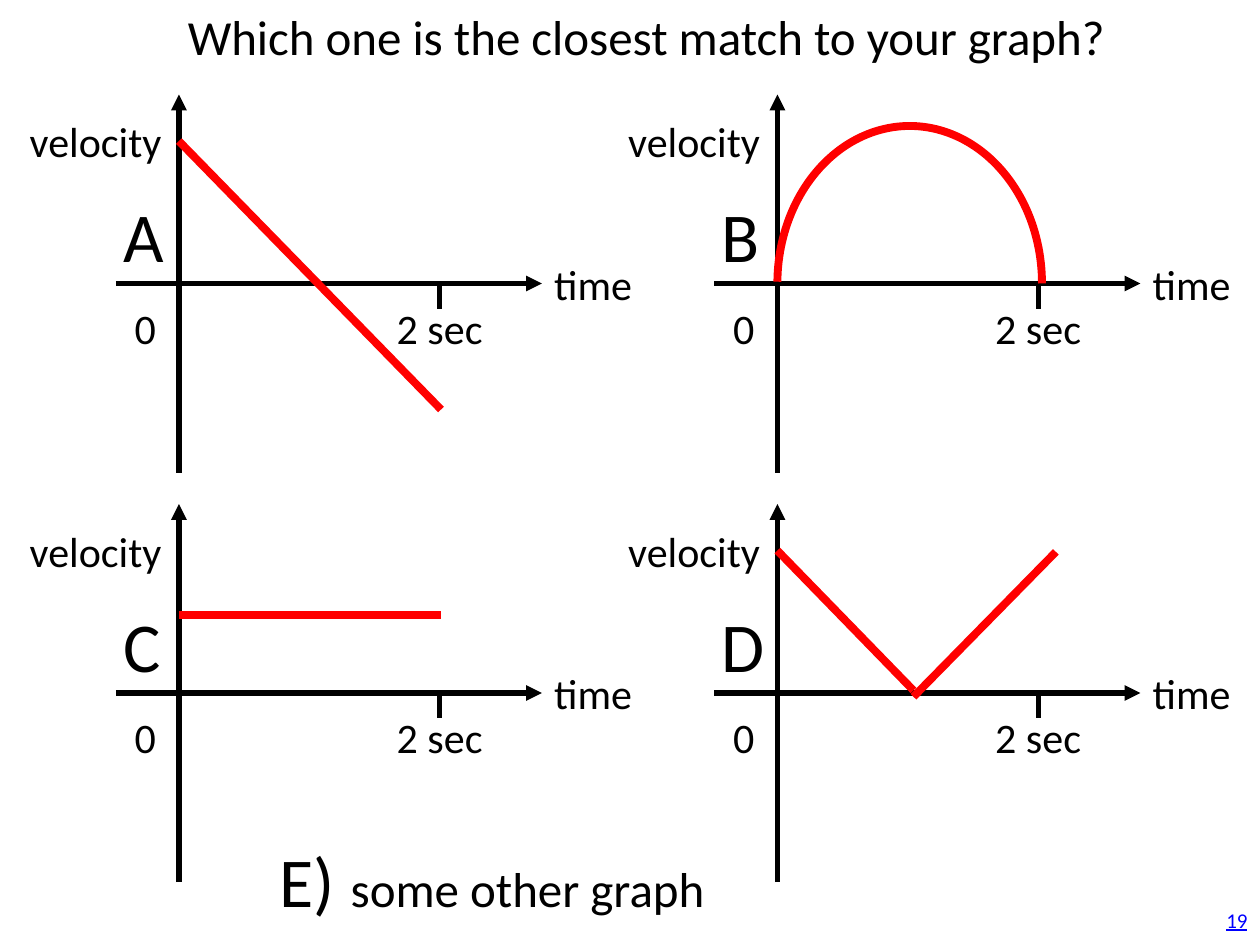
from dataclasses import dataclass

from lxml.etree import SubElement
from pptx import Presentation
from pptx.dml.color import RGBColor
from pptx.enum.shapes import MSO_CONNECTOR, MSO_SHAPE
from pptx.enum.text import MSO_ANCHOR, MSO_AUTO_SIZE, PP_ALIGN
from pptx.oxml.ns import qn
from pptx.shapes.base import BaseShape
from pptx.slide import Slide
from pptx.util import Inches, Pt


@dataclass(frozen=True)
class Theme:
    font: str = "Calibri"
    ink: RGBColor = RGBColor(0, 0, 0)
    curve: RGBColor = RGBColor(255, 0, 0)
    link: RGBColor = RGBColor(0, 0, 255)
    title: int = 28
    label: int = 24
    letter: int = 40
    number: int = 12
    axis_width: float = 3
    curve_width: float = 4.5


@dataclass(frozen=True)
class Panel:
    letter: str
    letter_width: float
    x: float
    y: float


@dataclass(frozen=True)
class Label:
    text: str
    dx: float
    dy: float
    width: float
    align: PP_ALIGN = PP_ALIGN.LEFT


@dataclass(frozen=True)
class Segment:
    x1: float
    y1: float
    x2: float
    y2: float


THEME = Theme()
LEFT, RIGHT = 1.42, 6.17
TOP, BOTTOM = 2.25, 5.5
PANELS = [
    Panel("A", 0.53, LEFT, TOP),
    Panel("B", 0.53, RIGHT, TOP),
    Panel("C", 0.5, LEFT, BOTTOM),
    Panel("D", 0.55, RIGHT, BOTTOM),
]
LABELS = [
    Label("time", 2.88, -0.25, 0.83),
    Label("velocity", -1.3, -1.38, 1.26, PP_ALIGN.RIGHT),
    Label("2 sec", 1.63, 0.1, 0.89),
    Label("0", -0.45, 0.1, 0.37),
]
CURVES = [
    Segment(LEFT, 1.12, 3.5, 3.25),
    Segment(RIGHT, 4.37, 7.25, 5.48),
    Segment(7.25, 5.53, 8.38, 4.38),
    Segment(LEFT, 4.88, 3.5, 4.88),
]


def write(sp: BaseShape, runs: list[tuple[str, int]],
          align: PP_ALIGN = PP_ALIGN.LEFT,
          color: RGBColor = THEME.ink, underline: bool = False) -> None:
    tf = sp.text_frame
    tf.word_wrap = False
    tf.auto_size = MSO_AUTO_SIZE.SHAPE_TO_FIT_TEXT
    tf.vertical_anchor = MSO_ANCHOR.TOP
    p = tf.paragraphs[0]
    p.alignment = align
    for text, size in runs:
        r = p.add_run()
        r.text = text
        r.font.name = THEME.font
        r.font.size = Pt(size)
        r.font.color.rgb = color
        if underline:
            r.font.underline = True


def add_text(s: Slide, x: float, y: float, w: float, h: float,
             runs: list[tuple[str, int]],
             align: PP_ALIGN = PP_ALIGN.LEFT) -> None:
    sp = s.shapes.add_textbox(Inches(x), Inches(y), Inches(w), Inches(h))
    write(sp, runs, align)


def add_line(s: Slide, seg: Segment, color: RGBColor, width: float,
             arrow: bool = False) -> None:
    cx = s.shapes.add_connector(
        MSO_CONNECTOR.STRAIGHT, Inches(seg.x1), Inches(seg.y1),
        Inches(seg.x2), Inches(seg.y2))
    cx.line.color.rgb = color
    cx.line.width = Pt(width)
    if arrow:
        SubElement(cx.line._get_or_add_ln(), qn("a:tailEnd"), type="triangle")
    SubElement(cx._element.spPr, qn("a:effectLst"))


def add_axes(s: Slide, panel: Panel) -> None:
    x, y = panel.x, panel.y
    tick = x + 2.07
    ink, width = THEME.ink, THEME.axis_width
    add_line(s, Segment(x - 0.5, y, x + 2.88, y), ink, width, arrow=True)
    add_line(s, Segment(x, y + 1.5, x, y - 1.5), ink, width, arrow=True)
    add_line(s, Segment(tick, y, tick, y + 0.2), ink, width)
    for label in LABELS:
        add_text(s, x + label.dx, y + label.dy, label.width, 0.5,
                 [(label.text, THEME.label)], label.align)
    add_text(s, x - 0.54, y - 0.77, panel.letter_width, 0.77,
             [(panel.letter, THEME.letter)])


def add_arc(s: Slide) -> None:
    sp = s.shapes.add_shape(MSO_SHAPE.ARC, Inches(RIGHT), Inches(1),
                            Inches(2.1), Inches(2.5))
    sp.adjustments[0] = 108.45
    sp.adjustments[1] = 0
    sp.shadow.inherit = False
    sp.fill.background()
    sp.line.color.rgb = THEME.curve
    sp.line.width = Pt(THEME.curve_width)


def add_title(s: Slide) -> None:
    sp = s.shapes.title
    sp.left, sp.top = Inches(1.39), Inches(0)
    sp.width, sp.height = Inches(7.77), Inches(0.57)
    write(sp, [("Which one is the closest match to your graph?", THEME.title)])


def add_number(s: Slide) -> None:
    sp = s.shapes.add_textbox(Inches(7.67), Inches(7.1),
                              Inches(2.33), Inches(0.4))
    write(sp, [("19", THEME.number)], PP_ALIGN.RIGHT, THEME.link, True)
    tf = sp.text_frame
    tf.word_wrap = True
    tf.auto_size = MSO_AUTO_SIZE.NONE
    tf.vertical_anchor = MSO_ANCHOR.MIDDLE


def main() -> None:
    prs = Presentation()
    prs.slide_width, prs.slide_height = Inches(10), Inches(7.5)
    s = prs.slides.add_slide(prs.slide_layouts[5])
    add_title(s)
    add_number(s)
    for panel in PANELS:
        add_axes(s, panel)
    add_text(s, 2.12, 6.6, 3.61, 0.77,
             [("E) ", THEME.letter), ("some other graph", THEME.title)])
    add_arc(s)
    for seg in CURVES:
        add_line(s, seg, THEME.curve, THEME.curve_width)
    prs.save("out.pptx")


if __name__ == "__main__":
    main()
